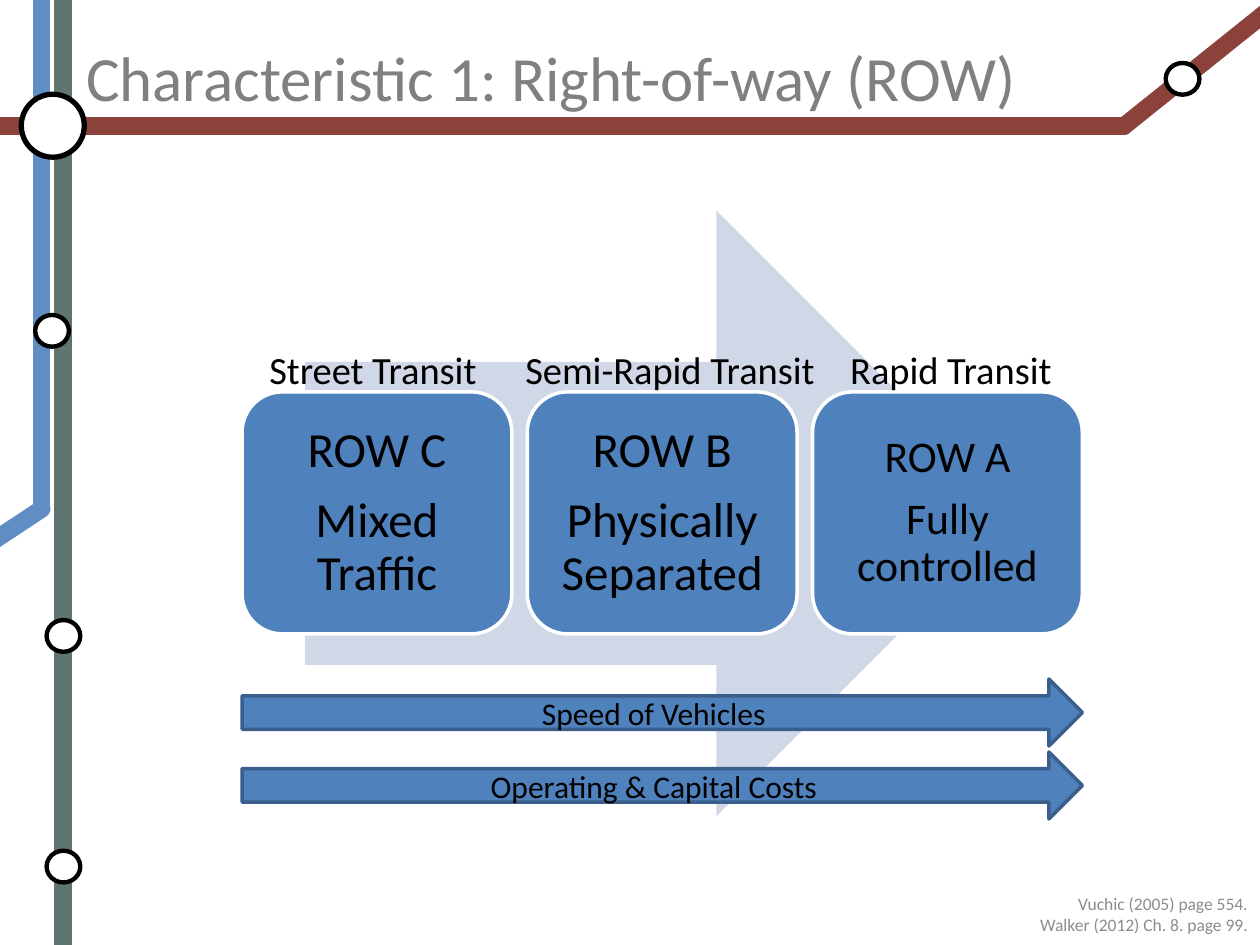
"""Build a transit-map styled slide on right-of-way categories."""
from typing import NamedTuple

from pptx import Presentation
from pptx.dml.color import RGBColor
from pptx.enum.shapes import MSO_CONNECTOR, MSO_SHAPE as Shape
from pptx.enum.text import MSO_ANCHOR as Anchor, MSO_AUTO_SIZE as AutoSize, PP_ALIGN as Align
from pptx.oxml.ns import qn
from pptx.oxml.xmlchemy import OxmlElement
from pptx.util import Cm, Pt

BLACK = RGBColor(0x00, 0x00, 0x00)
WHITE = RGBColor(0xFF, 0xFF, 0xFF)
TITLE_GREY = RGBColor(0x80, 0x80, 0x80)
SOURCE_GREY = RGBColor(0x8C, 0x8C, 0x8C)
GREEN_LINE = RGBColor(0x60, 0x74, 0x72)
BLUE_LINE = RGBColor(0x60, 0x8D, 0xC4)
RED_LINE = RGBColor(0x8A, 0x42, 0x3A)
PALE_BLUE = RGBColor(0xD0, 0xD8, 0xE8)
BLUE = RGBColor(0x4F, 0x81, 0xBD)
DARK_BLUE = RGBColor(0x3A, 0x5F, 0x8C)

CARD_LEFT, CARD_PITCH = 4.88, 5.75


class Track(NamedTuple):
    start: tuple[float, float]
    end: tuple[float, float]
    color: RGBColor


class Box(NamedTuple):
    left: float
    top: float
    width: float
    height: float

    def lengths(self) -> list:
        return [Cm(value) for value in self]


class Category(NamedTuple):
    service: str
    service_left: float
    service_width: float
    lines: tuple[str, str]
    size: int
    inset: float


TRACKS = [
    Track((1.27, 19.05), (1.27, 0), GREEN_LINE),
    Track((0.84, 10.16), (0.84, 0), BLUE_LINE),
    Track((0.84, 10.26), (-0.43, 11.1), BLUE_LINE),
    Track((0, 2.54), (22.66, 2.54), RED_LINE),
    Track((25.83, 0), (22.66, 2.54), RED_LINE),
]
STOPS = [(0.94, 12.5), (0.94, 17.15), (0.71, 6.35), (23.5, 1.27)]
CATEGORIES = [
    Category("Street Transit", 5.18, 4.85, ("ROW C", "Mixed Traffic"), 28, 0.3),
    Category("Semi-Rapid Transit", 10.34, 6.58, ("ROW B", "Physically Separated"), 28, 0.3),
    Category("Rapid Transit", 16.89, 4.75, ("ROW A", "Fully controlled"), 25, 0.25),
]
TRENDS = [("Speed of Vehicles", 13.69), ("Operating & Capital Costs", 15.16)]
SOURCES = ["Vuchic (2005) page 554.", "Walker (2012) Ch. 8. page 99."]


def apply(target, values: dict) -> None:
    for name, value in values.items():
        setattr(target, name, value)


def write(frame, lines, size: float, color: RGBColor, **paragraph_format) -> None:
    for index, line in enumerate(lines):
        paragraph = frame.add_paragraph() if index else frame.paragraphs[0]
        paragraph.text = line
        apply(paragraph, paragraph_format)
        apply(paragraph.font, {"name": "Calibri", "size": Pt(size)})
        paragraph.font.color.rgb = color


def draw_track(slide, track: Track) -> None:
    ends = [Cm(value) for value in track.start + track.end]
    rail = slide.shapes.add_connector(MSO_CONNECTOR.STRAIGHT, *ends)
    rail.line.color.rgb = track.color
    rail.line.width = Pt(10)
    properties = rail.element.spPr
    properties.find(qn("a:ln")).set("cap", "rnd")
    properties.append(OxmlElement("a:effectLst"))


def draw_shape(slide, kind, box: Box, fill: RGBColor, outline: RGBColor | None = None, width: float = 2):
    shape = slide.shapes.add_shape(kind, *box.lengths())
    shape.shadow.inherit = False
    shape.fill.solid()
    shape.fill.fore_color.rgb = fill
    if outline is None:
        shape.line.fill.background()
    else:
        shape.line.color.rgb = outline
        shape.line.width = Pt(width)
    return shape


def draw_category(slide, index: int, category: Category) -> None:
    box = Box(CARD_LEFT + index * CARD_PITCH, 7.9, 5.44, 4.88)
    card = draw_shape(slide, Shape.ROUNDED_RECTANGLE, box, BLUE, WHITE)
    sides = ("margin_left", "margin_top", "margin_right", "margin_bottom")
    apply(card.text_frame, dict.fromkeys(sides, Cm(category.inset)))
    apply(card.text_frame, {"word_wrap": True, "vertical_anchor": Anchor.MIDDLE})
    write(card.text_frame, category.lines, category.size, BLACK, alignment=Align.CENTER,
          line_spacing=0.9, space_after=Pt(round(category.size * 0.35, 1)))


def draw_service(slide, category: Category) -> None:
    box = Box(category.service_left, 6.86, category.service_width, 1.19)
    service = slide.shapes.add_textbox(*box.lengths()).text_frame
    apply(service, {"word_wrap": False, "auto_size": AutoSize.SHAPE_TO_FIT_TEXT})
    write(service, [category.service], 22, BLACK)


def draw_trend(slide, label: str, top: float) -> None:
    trend = draw_shape(slide, Shape.RIGHT_ARROW, Box(CARD_LEFT, top, 16.94, 1.35), BLUE, DARK_BLUE)
    trend.text_frame.vertical_anchor = Anchor.MIDDLE
    write(trend.text_frame, [label], 18, BLACK, alignment=Align.CENTER)


def main() -> None:
    deck = Presentation()
    apply(deck, {"slide_width": Cm(25.4), "slide_height": Cm(19.05)})
    slide = deck.slides.add_slide(deck.slide_layouts[5])

    for track in TRACKS:
        draw_track(slide, track)
    draw_shape(slide, Shape.OVAL, Box(0.43, 1.9, 1.27, 1.27), WHITE, BLACK, 3)
    for left, top in STOPS:
        draw_shape(slide, Shape.OVAL, Box(left, top, 0.68, 0.64), WHITE, BLACK, 2.5)

    title = slide.shapes.title
    apply(title, dict(zip(Box._fields, Box(1.48, 0.42, 22.66, 2.24).lengths())))
    title.text_frame.vertical_anchor = Anchor.MIDDLE
    write(title.text_frame, ["Characteristic 1: Right-of-way (ROW)"], 36, TITLE_GREY, alignment=Align.LEFT)

    draw_shape(slide, Shape.RIGHT_ARROW, Box(6.15, 4.24, 14.4, 12.22), PALE_BLUE)
    for index, category in enumerate(CATEGORIES):
        draw_category(slide, index, category)
    for category in CATEGORIES:
        draw_service(slide, category)
    for label, top in TRENDS:
        draw_trend(slide, label, top)

    sources = slide.shapes.add_textbox(*Box(15.67, 17.88, 9.73, 0.84).lengths()).text_frame
    sources.word_wrap = True
    write(sources, SOURCES, 10, SOURCE_GREY, alignment=Align.RIGHT)
    deck.save("out.pptx")


if __name__ == "__main__":
    main()
